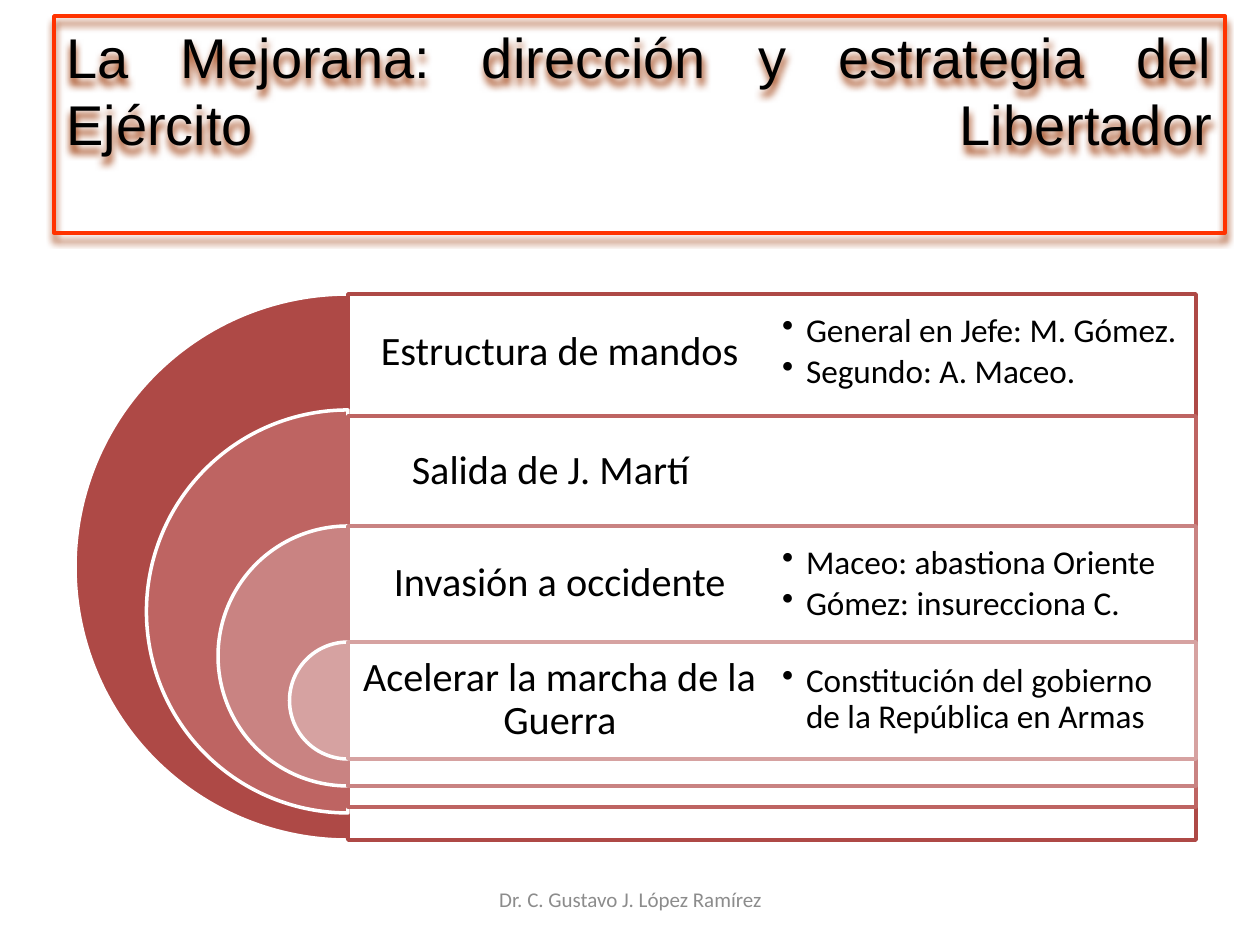
from pptx import Presentation
from pptx.dml.color import RGBColor
from pptx.enum.shapes import MSO_SHAPE
from pptx.enum.text import MSO_ANCHOR, PP_ALIGN
from pptx.oxml import parse_xml
from pptx.oxml.ns import nsdecls
from pptx.util import Pt
from lxml.etree import SubElement
from pptx.oxml.ns import qn

TITLE = "La Mejorana: dirección y estrategia del Ejército Libertador\v"
FOOTER = "Dr. C. Gustavo J. López Ramírez"
RINGS = [
    ("AE4946", "Estructura de mandos",
     ["General en Jefe: M. Gómez.", "Segundo: A. Maceo."], 0, 13),
    ("BE6462", "Salida de J. Martí", [], 6, 31),
    ("C98382", "Invasión a occidente",
     ["Maceo: abastiona Oriente", "Gómez: insurecciona C."], 0, 13),
    ("D6A2A1", "Acelerar la marcha de la Guerra",
     ["Constitución del gobierno de la República en Armas"], 0, 13),
]
TOP, ROW, MID, WIDE, HALF = 294, 116, 348, 848, 424
SIZE, SHRINK = 546, 143


def px(n):
    return round(n * 914400 / 126)


def color(code):
    return RGBColor.from_string(code)


def shape(kind, box, line, fill=None):
    item = slide.shapes.add_shape(kind, *map(px, box))
    item.shadow.inherit = False
    item.line.color.rgb = color(line)
    item.line.width = Pt(2)
    if fill:
        item.fill.solid()
        item.fill.fore_color.rgb = color(fill)
    else:
        item.fill.background()
    return item


def style(para, size, font="Calibri", ink="000000", align=PP_ALIGN.LEFT):
    para.alignment = align
    para.font.size = Pt(size)
    para.font.name = font
    para.font.color.rgb = color(ink)


def label(box, lines, pad, right, size, align, ink="000000"):
    frame = slide.shapes.add_textbox(*map(px, box)).text_frame
    frame.word_wrap = True
    frame.vertical_anchor = MSO_ANCHOR.MIDDLE
    frame.margin_left = frame.margin_top = frame.margin_bottom = px(pad)
    frame.margin_right = px(right)
    frame.text = "\n".join(lines)
    for para in frame.paragraphs:
        style(para, size, ink=ink, align=align)
        para.line_spacing = 0.9
    return frame


def bullet(para):
    para.space_after = Pt(3)
    props = para._p.get_or_add_pPr()
    props.set("marL", str(px(24)))
    props.set("indent", str(-px(24)))
    mark = parse_xml(f'<a:buChar {nsdecls("a")} char="•"/>')
    props.find(qn("a:defRPr")).addprevious(mark)


deck = Presentation()
deck.slide_width, deck.slide_height = px(1260), px(945)
slide = deck.slides.add_slide(deck.slide_layouts[6])

label((431, 876, 399, 50), [FOOTER], 6, 6, 12, PP_ALIGN.CENTER, "8C8C8C")

head = shape(MSO_SHAPE.RECTANGLE, (54, 16, 1171, 217), "FF3300")
glow = head._element.spPr.find(qn("a:effectLst"))
glow.append(parse_xml(
    f'<a:outerShdw {nsdecls("a")} blurRad="{Pt(4)}" dist="{Pt(4)}" '
    'dir="5400000" algn="ctr" rotWithShape="0">'
    '<a:srgbClr val="993300"/></a:outerShdw>'))
frame = head.text_frame
frame.word_wrap = True
frame.vertical_anchor = MSO_ANCHOR.TOP
frame.text = TITLE
style(frame.paragraphs[0], 32, "Arial", align=PP_ALIGN.JUSTIFY)

for i, (tint, name, notes, inset, right) in enumerate(RINGS):
    top, size = TOP + i * ROW, SIZE - i * SHRINK
    pie = shape(MSO_SHAPE.PIE, (MID - size / 2, top, size, size), "FFFFFF", tint)
    pie.adjustments[0], pie.adjustments[1] = 54, 162
    panel = shape(MSO_SHAPE.RECTANGLE,
                  (MID, top + inset, WIDE, size - 2 * inset), tint, "FFFFFF")
    fill = panel._element.spPr.find(qn("a:solidFill"))
    SubElement(fill[0], qn("a:alpha")).set("val", "90000")
    label((MID, top + inset, HALF, ROW - inset), [name], 13, right, 23,
          PP_ALIGN.CENTER)
    if notes:
        block = label((MID + HALF, top, HALF, ROW), notes, 10, 10, 19,
                      PP_ALIGN.LEFT)
        for para in block.paragraphs:
            bullet(para)

deck.save("out.pptx")
